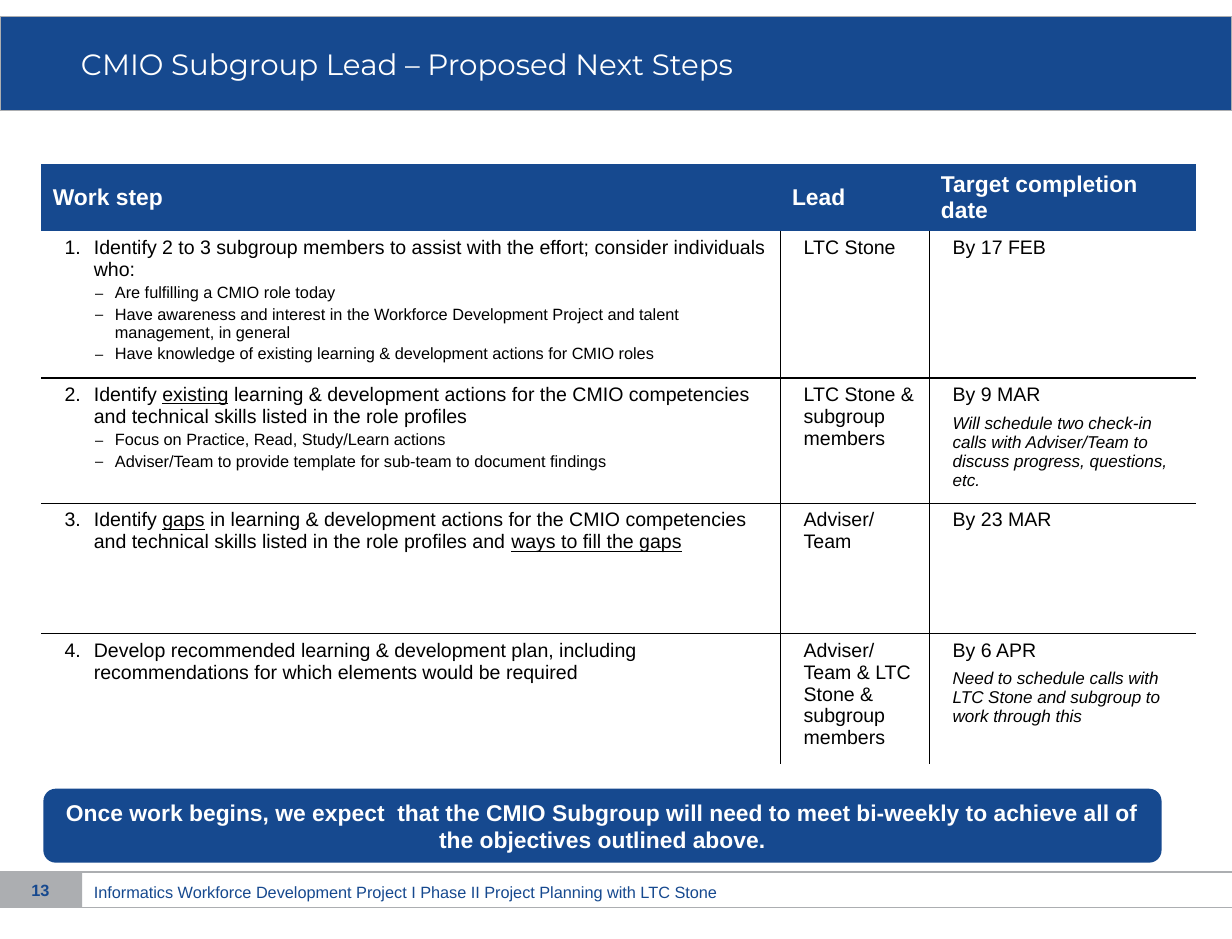
from lxml import etree
from pptx import Presentation
from pptx.dml.color import RGBColor
from pptx.enum.shapes import MSO_CONNECTOR, MSO_SHAPE
from pptx.enum.text import MSO_ANCHOR, PP_ALIGN
from pptx.oxml.ns import qn
from pptx.util import Inches, Pt

COLORS = {"blue": "16498F", "gray": "ACAEB1", "white": "FFFFFF", "black": "000000"}
TITLE = "CMIO Subgroup Lead – Proposed Next Steps"
FOOTER = "Informatics Workforce Development Project I Phase II Project Planning with LTC Stone"
PAGE = "13"
BANNER = ("Once work begins, we expect  that the CMIO Subgroup will need to meet "
          "bi-weekly to achieve all of the objectives outlined above.")
HEADERS = ["Work step", "Lead", "Target completion date"]
# Underscores enclose underlined words.
STEPS = [
    {"step": "Identify 2 to 3 subgroup members to assist with the effort; "
             "consider individuals who:",
     "details": ["Are fulfilling a CMIO role today",
                 "Have awareness and interest in the Workforce Development Project "
                 "and talent management, in general",
                 "Have knowledge of existing learning & development actions for CMIO roles"],
     "lead": "LTC Stone", "date": "By 17 FEB"},
    {"step": "Identify _existing_ learning & development actions for the CMIO "
             "competencies and technical skills listed in the role profiles",
     "details": ["Focus on Practice, Read, Study/Learn actions",
                 "Adviser/Team to provide template for sub-team to document findings"],
     "lead": "LTC Stone & subgroup members", "date": "By 9 MAR",
     "note": "Will schedule two check-in calls with Adviser/Team to discuss progress, "
             "questions, etc."},
    {"step": "Identify _gaps_ in learning & development actions for the CMIO "
             "competencies and technical skills listed in the role profiles and "
             "_ways to fill the gaps_",
     "lead": "Adviser/Team", "date": "By 23 MAR"},
    {"step": "Develop recommended learning & development plan, including "
             "recommendations for which elements would be required",
     "lead": "Adviser/Team & LTC Stone & subgroup members", "date": "By 6 APR",
     "note": "Need to schedule calls with LTC Stone and subgroup to work through this"},
]
COLUMN_WIDTHS = [6.3, 1.27, 2.27]
ROW_HEIGHTS = [0.53, 1.2, 1.01, 1.11, 1.11]
NO_GRID_STYLE = "{2D5ABB26-0587-4C30-8999-92F81FD0307C}"


def rgb(name):
    return RGBColor.from_string(COLORS[name])


def box(left, top, width, height):
    return [Inches(value) for value in (left, top, width, height)]


def set_margins(frame, left, top=0.05, right=0.11, bottom=0.05):
    frame.margin_left, frame.margin_top = Inches(left), Inches(top)
    frame.margin_right, frame.margin_bottom = Inches(right), Inches(bottom)


def write(paragraph, words, size, color, font="Arial", bold=False, italic=False):
    for index, part in enumerate(words.split("_")):
        if part:
            run = paragraph.add_run()
            run.text = part
            run.font.name, run.font.size = font, Pt(size)
            run.font.bold, run.font.italic = bold, italic
            run.font.underline = index % 2 == 1
            run.font.color.rgb = rgb(color)


def set_bullet(paragraph, margin, hanging, tag, size=100, **attributes):
    props = paragraph._p.get_or_add_pPr()
    props.set("marL", str(Inches(margin)))
    props.set("indent", str(-Inches(hanging)))
    color = etree.SubElement(props, qn("a:buClr"))
    etree.SubElement(color, qn("a:srgbClr"), val=COLORS["black"])
    etree.SubElement(props, qn("a:buSzPct"), val=str(size * 1000))
    etree.SubElement(props, qn("a:buFont"), typeface="Arial")
    etree.SubElement(props, qn(tag), attributes)


def set_borders(cell, sides):
    props = cell._tc.get_or_add_tcPr()
    for index, side in enumerate("LRTB"):
        line = etree.Element(qn("a:ln" + side), w=str(Pt(1)))
        if side in sides:
            fill = etree.SubElement(line, qn("a:solidFill"))
            etree.SubElement(fill, qn("a:srgbClr"), val=COLORS["black"])
        else:
            etree.SubElement(line, qn("a:noFill"))
        props.insert(index, line)


def fill_shape(shape, color):
    shape.shadow.inherit = False
    shape.fill.solid()
    shape.fill.fore_color.rgb = rgb(color)
    shape.line.fill.background()


def add_label(slide, place, words, color, **style):
    frame = slide.shapes.add_textbox(*box(*place)).text_frame
    frame.word_wrap = True
    set_margins(frame, 0.11)
    write(frame.paragraphs[0], words, 10, color, **style)
    return frame.paragraphs[0]


def add_title(slide):
    title = slide.shapes.title
    title.left, title.top, title.width, title.height = box(0, 0.14, 10.5, 0.8)
    title.fill.solid()
    title.fill.fore_color.rgb = rgb("blue")
    title.line.color.rgb = rgb("gray")
    title.line.width = Pt(0.75)
    frame = title.text_frame
    frame.vertical_anchor = MSO_ANCHOR.MIDDLE
    set_margins(frame, 0.69)
    frame.paragraphs[0].alignment = PP_ALIGN.LEFT
    write(frame.paragraphs[0], TITLE, 18, "white", font="Montserrat")


def add_footer(slide):
    page_tab = slide.shapes.add_shape(MSO_SHAPE.RECTANGLE, *box(0, 7.43, 0.7, 0.3))
    fill_shape(page_tab, "gray")
    for y in (7.43, 7.73):
        rule = slide.shapes.add_connector(MSO_CONNECTOR.STRAIGHT, 0, Inches(y),
                                          Inches(10.5), Inches(y))
        rule.line.color.rgb = rgb("gray")
        rule.line.width = Pt(0.75)
        etree.SubElement(rule._element.spPr, qn("a:effectLst"))
    add_label(slide, (0.69, 7.47, 6.5, 0.22), FOOTER, "blue")
    page = add_label(slide, (0.04, 7.45, 0.61, 0.27), PAGE, "blue", bold=True)
    page.alignment = PP_ALIGN.CENTER


def fill_step(step_frame, number, item):
    first = step_frame.paragraphs[0]
    write(first, item["step"], 12, "black")
    set_bullet(first, 0.25, 0.25, "a:buAutoNum", type="arabicPeriod", startAt=str(number))
    for detail in item.get("details", []):
        paragraph = step_frame.add_paragraph()
        paragraph.level = 1
        paragraph.space_before = Pt(2)
        write(paragraph, detail, 10, "black")
        set_bullet(paragraph, 0.43, 0.17, "a:buChar", size=90, char="–")


def add_steps_table(slide):
    rows, columns = len(ROW_HEIGHTS), len(COLUMN_WIDTHS)
    place = box(0.35, 1.4, sum(COLUMN_WIDTHS), sum(ROW_HEIGHTS))
    table = slide.shapes.add_table(rows, columns, *place).table
    table.horz_banding = False
    table._tbl.tblPr.find(qn("a:tableStyleId")).text = NO_GRID_STYLE
    for column, width in zip(table.columns, COLUMN_WIDTHS):
        column.width = Inches(width)
    for row, height in zip(table.rows, ROW_HEIGHTS):
        row.height = Inches(height)

    for c, header in enumerate(HEADERS):
        cell = table.cell(0, c)
        cell.fill.solid()
        cell.fill.fore_color.rgb = rgb("blue")
        cell.vertical_anchor = MSO_ANCHOR.MIDDLE
        set_margins(cell, 0.1, right=0.1)
        write(cell.text_frame.paragraphs[0], header, 14, "white", bold=True)
        set_borders(cell, "")

    for r, item in enumerate(STEPS, 1):
        cells = [table.cell(r, c) for c in range(columns)]
        for c, cell in enumerate(cells):
            cell.fill.background()
            set_margins(cell, 0.2, right=0.1)
            set_borders(cell, "L" * (c > 0) + "R" * (c < columns - 1)
                        + "T" * (r > 1) + "B" * (r < rows - 1))
        step, lead, date = [cell.text_frame for cell in cells]
        fill_step(step, r, item)
        write(lead.paragraphs[0], item["lead"], 12, "black")
        write(date.paragraphs[0], item["date"], 12, "black")
        if "note" in item:
            note = date.add_paragraph()
            note.space_before = Pt(5)
            write(note, item["note"], 10.5, "black", italic=True)


def add_banner(slide):
    banner = slide.shapes.add_shape(MSO_SHAPE.ROUNDED_RECTANGLE, *box(0.37, 6.72, 9.53, 0.63))
    fill_shape(banner, "blue")
    frame = banner.text_frame
    frame.word_wrap = True
    set_margins(frame, 0.1, right=0.1)
    frame.paragraphs[0].alignment = PP_ALIGN.CENTER
    write(frame.paragraphs[0], BANNER, 14, "white", bold=True)


def main():
    deck = Presentation()
    deck.slide_width, deck.slide_height = Inches(10.5), Inches(8)
    slide = deck.slides.add_slide(deck.slide_layouts[5])
    add_footer(slide)
    add_title(slide)
    add_steps_table(slide)
    add_banner(slide)
    deck.save("out.pptx")


if __name__ == "__main__":
    main()
